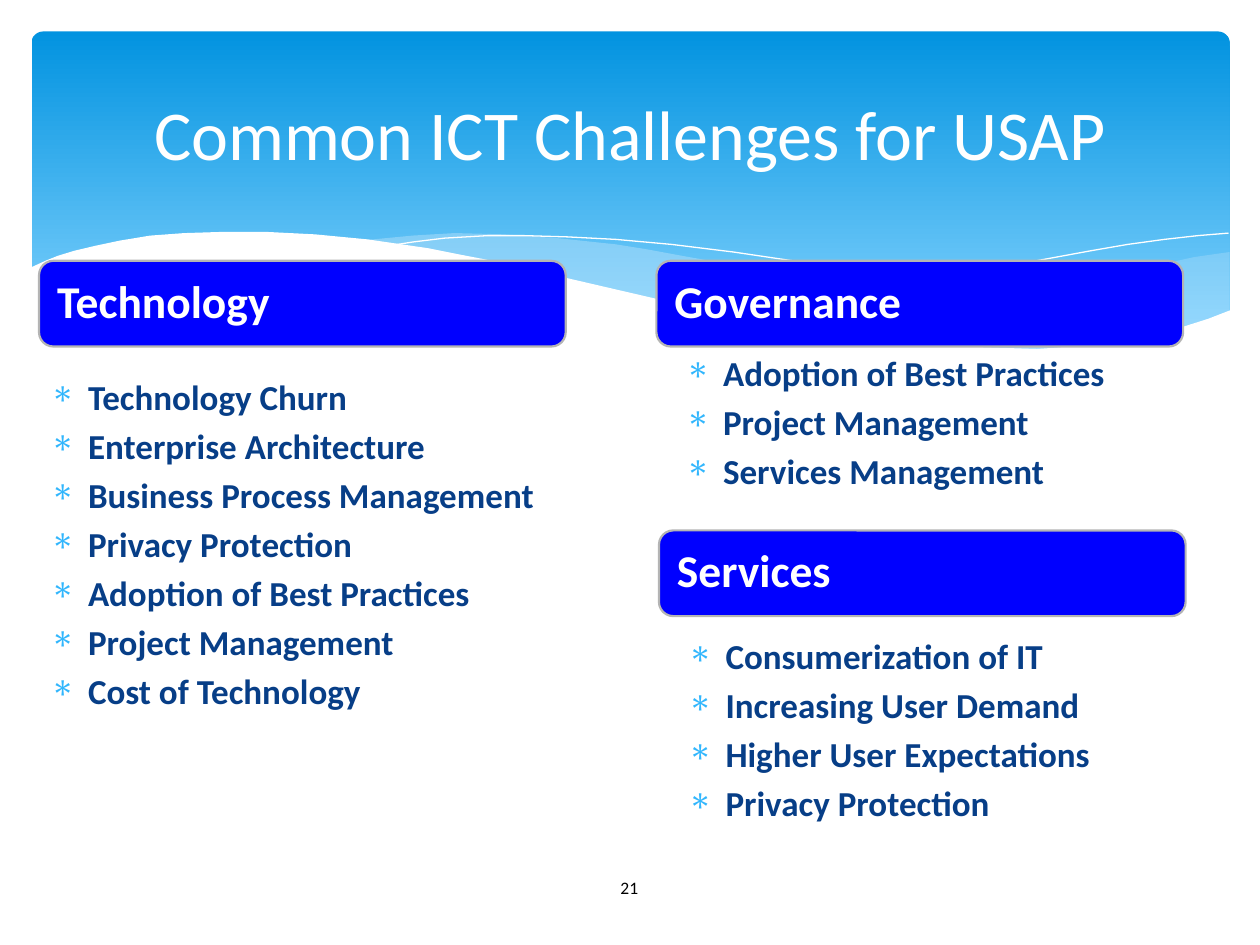
from lxml import etree
from pptx import Presentation
from pptx.dml.color import RGBColor
from pptx.enum.shapes import MSO_SHAPE
from pptx.enum.text import MSO_ANCHOR, PP_ALIGN
from pptx.oxml.ns import qn
from pptx.util import Inches, Pt

ROUNDED = MSO_SHAPE.ROUNDED_RECTANGLE
TOP, MIDDLE = MSO_ANCHOR.TOP, MSO_ANCHOR.MIDDLE
LEFT, CENTER = PP_ALIGN.LEFT, PP_ALIGN.CENTER
COLORS = {
    "sky_top": "0293E0", "sky_bottom": "83D3FE", "mist": "C6E7FC",
    "white": "FFFFFF", "black": "000000", "navy": "073E87",
    "bullet": "31B6FD", "heading": "0000FF", "border": "B4B4B4",
}


def rgb(name):
    return RGBColor.from_string(COLORS[name])


def write(sp, lines, size, color, bold=False, align=LEFT, anchor=TOP,
          inset=(0.1, 0.05), spacing=None, before=0, bullet=None):
    """Fill a shape with one paragraph per line; inset is (x, y) in inches."""
    tf = sp.text_frame
    tf.word_wrap = True
    tf.vertical_anchor = anchor
    tf.margin_left = tf.margin_right = Inches(inset[0])
    tf.margin_top = tf.margin_bottom = Inches(inset[1])
    for i, line in enumerate(lines):
        p = tf.add_paragraph() if i else tf.paragraphs[0]
        p.alignment = align
        p.line_spacing = spacing
        p.space_before = Pt(before if i else 0)
        if bullet:
            pPr = p._p.get_or_add_pPr()
            pPr.set("marL", str(Inches(0.3)))
            pPr.set("indent", str(-Inches(0.3)))
            clr = etree.SubElement(pPr, qn("a:buClr"))
            etree.SubElement(clr, qn("a:srgbClr"), val=COLORS["bullet"])
            etree.SubElement(pPr, qn("a:buChar"), char=bullet)
        r = p.add_run()
        r.text = line
        r.font.name = "Calibri"
        r.font.size = Pt(size)
        r.font.bold = bold
        r.font.color.rgb = rgb(color)


prs = Presentation()
prs.slide_width, prs.slide_height = Inches(10), Inches(7.5)
s = prs.slides.add_slide(prs.slide_layouts[6])

# Sky banner
sp = s.shapes.add_shape(ROUNDED, Inches(0.25), Inches(0.25), Inches(9.51), Inches(2.7))
sp.adjustments[0] = 0.034
sp.shadow.inherit = False
sp.line.fill.background()
sp.fill.gradient()
sp.fill.gradient_angle = 270
for stop, name, position in zip(sp.fill.gradient_stops, ("sky_top", "sky_bottom"), (0, 0.9)):
    stop.color.rgb = rgb(name)
    stop.position = position

# Waves: outline points, fill, opacity in percent; a wave without fill is a thin line
right_wave = [
    (9.76, 2), (9.48, 2.04), (9.21, 2.1), (8.91, 2.16), (8.61, 2.23), (8.05, 2.37),
    (7.53, 2.48), (7.06, 2.57), (6.61, 2.65), (6.91, 2.69), (7.19, 2.72), (7.45, 2.75),
    (7.69, 2.77), (8.03, 2.78), (8.35, 2.77), (8.63, 2.75), (8.89, 2.72), (9.13, 2.67),
    (9.35, 2.62), (9.49, 2.57), (9.76, 2.47)]
middle_wave = [
    (8.93, 2.73), (8.66, 2.69), (8.07, 2.6), (7.41, 2.47), (6.68, 2.31), (6.29, 2.22),
    (5.98, 2.14), (5.69, 2.08), (5.41, 2.03), (5.14, 1.98), (4.89, 1.94), (4.42, 1.89),
    (3.99, 1.86), (3.61, 1.85), (3.28, 1.87), (2.86, 1.91), (3.23, 1.96), (3.62, 2.03),
    (4.04, 2.11), (4.49, 2.22), (4.91, 2.32), (5.3, 2.4), (5.84, 2.52), (6.18, 2.58),
    (6.5, 2.64), (6.8, 2.68), (7.09, 2.72), (7.36, 2.75), (7.61, 2.77), (7.96, 2.78),
    (8.28, 2.78), (8.57, 2.77), (8.76, 2.75)]
long_crest = [
    (3.09, 1.95), (3.28, 1.92), (3.53, 1.89), (3.87, 1.87), (4.16, 1.87), (4.5, 1.88),
    (4.89, 1.9), (5.33, 1.94), (5.82, 2), (6.36, 2.08), (6.95, 2.19), (7.27, 2.26),
    (7.6, 2.33), (7.95, 2.41), (8.31, 2.51), (8.69, 2.61), (9.07, 2.72)]
right_crest = [
    (6.13, 2.57), (6.53, 2.46), (6.95, 2.35), (7.48, 2.23), (8.06, 2.1), (8.66, 1.99),
    (8.95, 1.94), (9.24, 1.9), (9.51, 1.87), (9.75, 1.85)]
white_wave = [
    (9.77, 2.46), (9.59, 2.53), (9.4, 2.59), (9.2, 2.65), (8.99, 2.69), (8.75, 2.73),
    (8.5, 2.75), (8.23, 2.77), (7.93, 2.76), (7.61, 2.75), (7.26, 2.72), (6.88, 2.68),
    (6.48, 2.62), (6.03, 2.54), (5.55, 2.45), (5.03, 2.33), (4.47, 2.2), (3.91, 2.07),
    (3.65, 2.02), (3.4, 1.97), (2.92, 1.9), (2.5, 1.86), (2.11, 1.84), (1.77, 1.84),
    (1.46, 1.85), (1.19, 1.87), (0.95, 1.91), (0.76, 1.95), (0.59, 1.99), (0.46, 2.03),
    (0.36, 2.07), (0.23, 2.13), (0.23, 3.29), (9.77, 3.29)]

for points, fill, opacity in (
    (right_wave, "mist", 29), (middle_wave, "mist", 40), (long_crest, None, 100),
    (right_crest, None, 100), (white_wave, "white", 100),
):
    start, *rest = [(Inches(x), Inches(y)) for x, y in points]
    builder = s.shapes.build_freeform(*start)
    builder.add_line_segments(rest, close=bool(fill))
    sp = builder.convert_to_shape()
    sp.shadow.inherit = False
    if not fill:
        sp.fill.background()
        sp.line.color.rgb = rgb("white")
        sp.line.width = Pt(0)
        continue
    sp.fill.solid()
    sp.fill.fore_color.rgb = rgb(fill)
    sp.line.fill.background()
    if opacity < 100:
        clr = sp._element.spPr.find(qn("a:solidFill")).find(qn("a:srgbClr"))
        etree.SubElement(clr, qn("a:alpha"), val=str(opacity * 1000))

# Title and page number
sp = s.shapes.add_textbox(Inches(0.5), Inches(0.37), Inches(9), Inches(1.37))
write(sp, ["Common ICT Challenges for USAP"], 40, "white", align=CENTER, anchor=MIDDLE)
sp = s.shapes.add_textbox(Inches(4.36), Inches(6.84), Inches(1.27), Inches(0.4))
write(sp, ["21"], 10, "black", align=CENTER, anchor=MIDDLE)

# Sections: heading, its left and top, then the list with its left, top and height
sections = [
    ("Technology", 0.31, 2.07, 0.3, 2.93, 3.05, [
        "Technology Churn", "Enterprise Architecture", "Business Process Management",
        "Privacy Protection", "Adoption of Best Practices", "Project Management",
        "Cost of Technology"]),
    ("Services", 5.23, 4.21, 5.36, 4.99, 2.04, [
        "Consumerization of IT", "Increasing User Demand", "Higher User Expectations",
        "Privacy Protection"]),
    ("Governance", 5.21, 2.07, 5.34, 2.74, 1.34, [
        "Adoption of Best Practices", "Project Management", "Services Management"]),
]
for heading, x, y, list_x, list_y, list_h, items in sections:
    sp = s.shapes.add_shape(ROUNDED, Inches(x), Inches(y), Inches(4.18), Inches(0.68))
    sp.shadow.inherit = False
    sp.fill.solid()
    sp.fill.fore_color.rgb = rgb("heading")
    sp.line.color.rgb = rgb("border")
    sp.line.width = Pt(1.25)
    write(sp, [heading], 26, "white", bold=True, anchor=MIDDLE, inset=(0.11, 0.11), spacing=0.9)
    sp = s.shapes.add_textbox(Inches(list_x), Inches(list_y), Inches(4.18), Inches(list_h))
    write(sp, items, 20, "navy", bold=True, before=4, bullet="∗")

prs.save("out.pptx")
